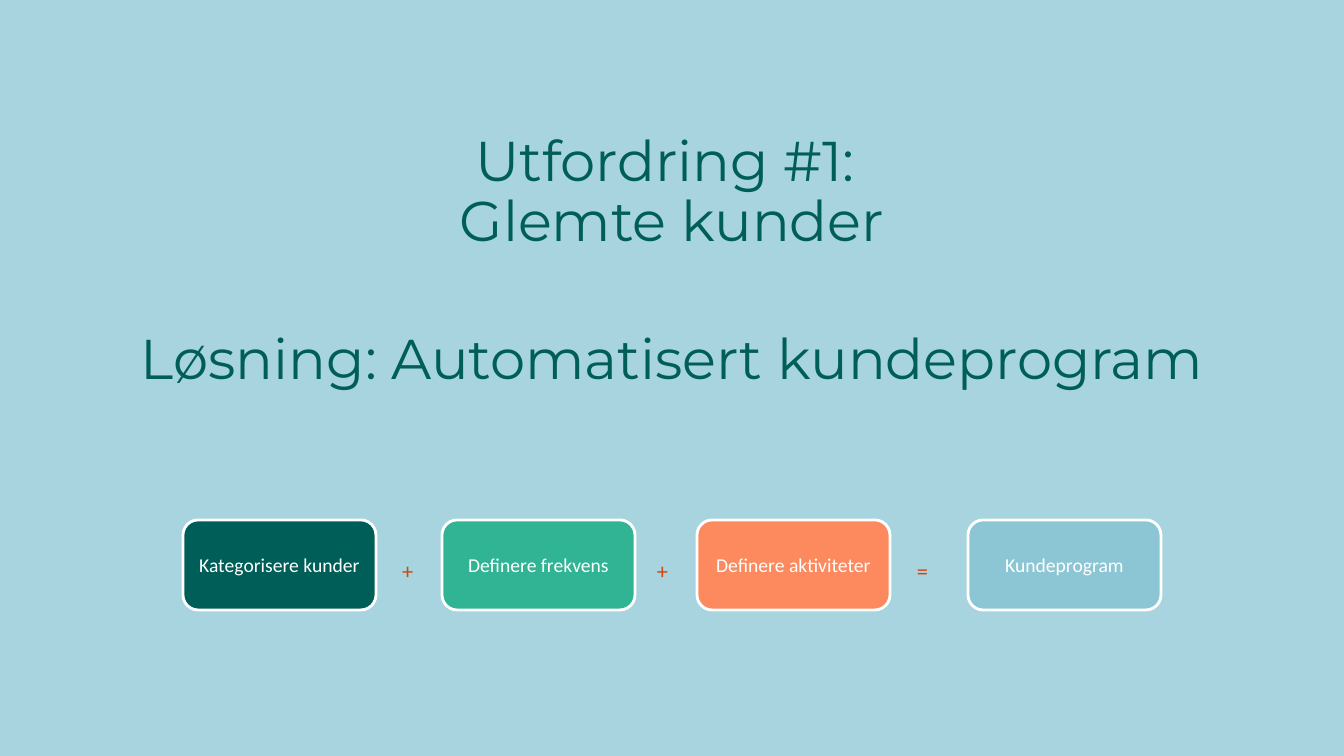
from pptx import Presentation
from pptx.dml.color import RGBColor
from pptx.enum.shapes import MSO_SHAPE
from pptx.enum.text import MSO_ANCHOR, PP_ALIGN
from pptx.util import Emu, Pt

EMU_PER_PX = 914400 / 100.8
SLIDE_WIDTH, SLIDE_HEIGHT = 1344, 756

SKY, PINE, WHITE, RUST = "A7D4DE", "005E58", "FFFFFF", "D5450D"

HEADING = {"name": "Montserrat", "size": Pt(40)}
STEP_LABEL = {"name": "Calibri", "size": Pt(14)}
OPERATOR = {"name": "Calibri", "size": Pt(16)}

HEADINGS = [
    (128, ["Utfordring #1: ", "Glemte kunder"]),
    (326, ["Løsning: Automatisert kundeprogram"]),
]
STEPS = [
    (183, "Kategorisere kunder", PINE),
    (442, "Definere frekvens", "30B494"),
    (697, "Definere aktiviteter", "FC8A5E"),
    (968, "Kundeprogram", "8CC6D4"),
]
OPERATORS = [(402, "+"), (657, "+"), (917, "=")]


def px(length):
    return Emu(round(length * EMU_PER_PX))


def color(hex_code):
    return RGBColor.from_string(hex_code)


def set_margins(frame, margin):
    for side in ("left", "top", "right", "bottom"):
        setattr(frame, f"margin_{side}", px(margin))


def write_lines(frame, lines, font_format, hex_code, alignment):
    frame.word_wrap = True
    paragraph = frame.paragraphs[0]
    paragraph.alignment = alignment
    for index, line in enumerate(lines):
        if index:
            paragraph.add_line_break()
        run = paragraph.add_run()
        run.text = line
        for attribute, value in font_format.items():
            setattr(run.font, attribute, value)
        run.font.color.rgb = color(hex_code)
    return paragraph


def add_heading(slide, top, lines):
    heading = slide.shapes.add_textbox(0, px(top), px(SLIDE_WIDTH), px(205))
    paragraph = write_lines(heading.text_frame, lines, HEADING, PINE, PP_ALIGN.CENTER)
    paragraph.line_spacing = 0.9


def add_step(slide, left, label, fill):
    step = slide.shapes.add_shape(
        MSO_SHAPE.ROUNDED_RECTANGLE, px(left), px(520), px(193), px(90))
    step.shadow.inherit = False
    step.fill.solid()
    step.fill.fore_color.rgb = color(fill)
    step.line.color.rgb = color(WHITE)
    step.line.width = Pt(2)
    step.text_frame.vertical_anchor = MSO_ANCHOR.MIDDLE
    set_margins(step.text_frame, 8)
    write_lines(step.text_frame, [label], STEP_LABEL, WHITE, PP_ALIGN.CENTER)


def add_operator(slide, left, sign):
    operator = slide.shapes.add_textbox(px(left), px(557), px(39), px(35))
    set_margins(operator.text_frame, 0)
    write_lines(operator.text_frame, [sign], OPERATOR, RUST, PP_ALIGN.LEFT)


def main():
    deck = Presentation()
    deck.slide_width, deck.slide_height = px(SLIDE_WIDTH), px(SLIDE_HEIGHT)
    slide = deck.slides.add_slide(deck.slide_layouts[6])
    slide.background.fill.solid()
    slide.background.fill.fore_color.rgb = color(SKY)

    # Challenge and solution
    for top, lines in HEADINGS:
        add_heading(slide, top, lines)

    # Steps that add up to the customer programme
    for left, label, fill in STEPS:
        add_step(slide, left, label, fill)
    for left, sign in OPERATORS:
        add_operator(slide, left, sign)

    deck.save("out.pptx")


if __name__ == "__main__":
    main()
